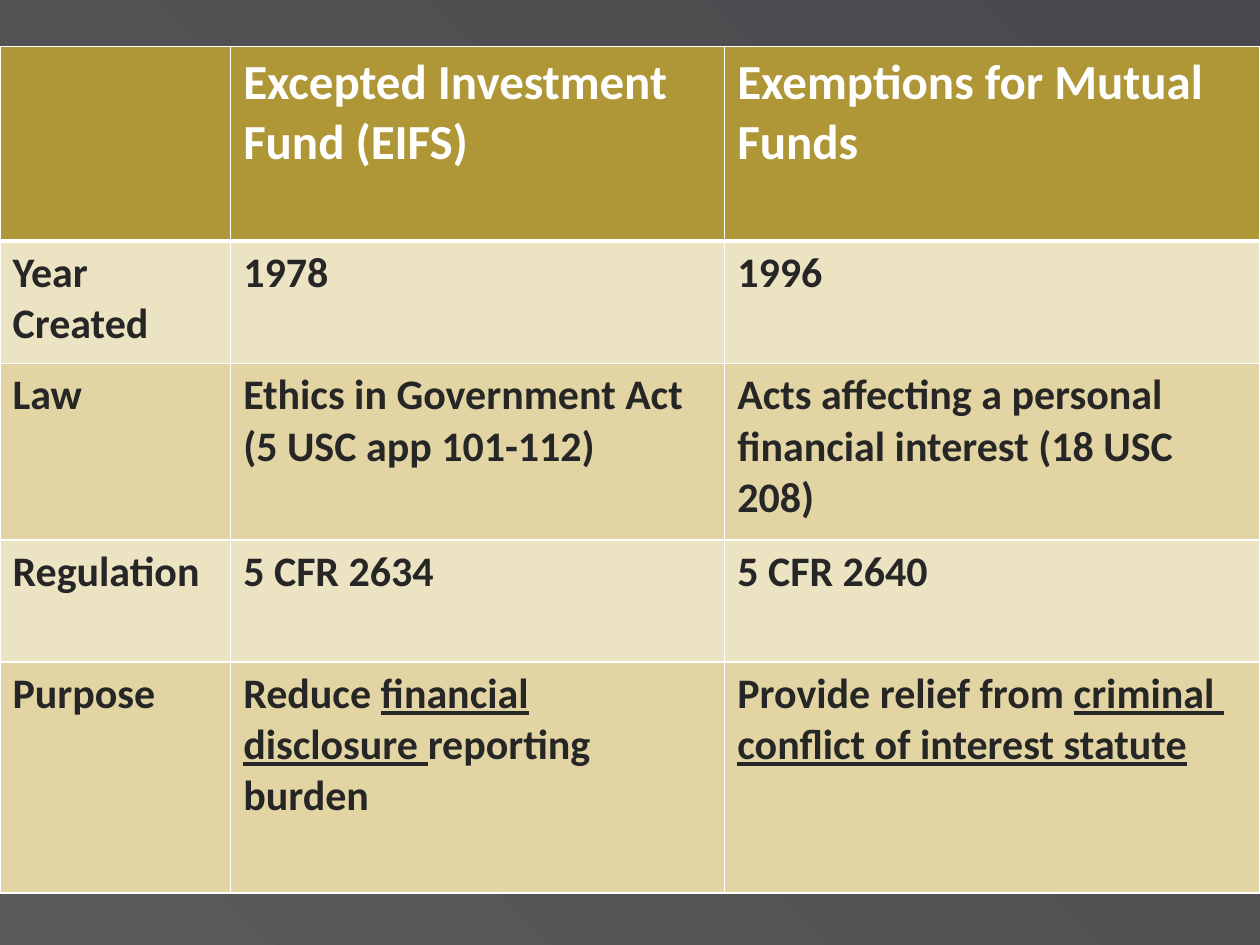
"""Build a slide comparing excepted investment funds with mutual fund exemptions."""
from lxml.etree import SubElement as Sub
from pptx import Presentation
from pptx.dml.color import RGBColor as Rgb
from pptx.oxml.ns import qn
from pptx.util import Cm, Pt

HUES = {
    "head": "AF9738", "light": "EBE3C2", "dark": "E2D5A3",
    "white": "FFFFFF", "ink": "262626", "gray": "595959", "slate": "4A484D",
}
ROWS = [
    ["", "Excepted Investment Fund (EIFS)", "Exemptions for Mutual Funds"],
    ["Year Created", "1978", "1996"],
    ["Law", "Ethics in Government Act (5 USC app 101-112)",
     "Acts affecting a personal financial interest (18 USC 208)"],
    ["Regulation", "5 CFR 2634", "5 CFR 2640"],
    ["Purpose", ("Reduce ", "financial disclosure ", "reporting burden"),
     ("Provide relief from ", "criminal  conflict of interest statute")],
]
WIDTHS = [4.65, 9.96, 10.79]
HEIGHTS = [3.92, 2.47, 3.56, 2.46, 4.65]
TOP = 0.94


def paint(slide):
    """Fill the background with a gradient from the lower left corner."""
    fill = slide.background.fill
    fill.gradient()
    for stop, hue in zip(fill.gradient_stops, ("gray", "slate")):
        stop.color.rgb = Rgb.from_string(HUES[hue])
    grad = next(slide.element.iter(qn("a:gradFill")))
    grad.remove(grad.find(qn("a:lin")))
    path = Sub(grad, qn("a:path"), path="circle")
    Sub(path, qn("a:fillToRect"), t="100000", r="100000")


def edge(cell, row):
    """Draw white cell borders, thicker below the header."""
    props = cell._tc.get_or_add_tcPr()
    for side in "LRTB":
        thick = (row, side) in ((0, "B"), (1, "T"))
        line = Sub(props, qn(f"a:ln{side}"), w=str(Pt(3 if thick else 1)))
        solid = Sub(line, qn("a:solidFill"))
        Sub(solid, qn("a:srgbClr"), val=HUES["white"])


def write(cell, text, row):
    """Put text in a cell, underlining every second part."""
    para = cell.text_frame.paragraphs[0]
    parts = (text,) if isinstance(text, str) else text
    for i, part in enumerate(parts):
        run = para.add_run()
        run.text = part
        font = run.font
        font.name, font.bold = "Calibri", True
        font.size = Pt(24 if row else 28)
        font.underline = i % 2 == 1
        font.color.rgb = Rgb.from_string(HUES["ink" if row else "white"])


def main():
    """Make the deck and save it."""
    deck = Presentation()
    deck.slide_width, deck.slide_height = Cm(25.4), Cm(19.05)
    slide = deck.slides.add_slide(deck.slide_layouts[6])
    paint(slide)
    grid = slide.shapes.add_table(
        len(ROWS), len(WIDTHS), Cm(0), Cm(TOP), Cm(sum(WIDTHS)), Cm(sum(HEIGHTS))
    ).table
    for col, width in zip(grid.columns, WIDTHS):
        col.width = Cm(width)
    for r, (texts, height) in enumerate(zip(ROWS, HEIGHTS)):
        grid.rows[r].height = Cm(height)
        hue = ("dark", "light")[r % 2] if r else "head"
        for c, text in enumerate(texts):
            cell = grid.cell(r, c)
            edge(cell, r)
            cell.fill.solid()
            cell.fill.fore_color.rgb = Rgb.from_string(HUES[hue])
            if text:
                write(cell, text, r)
    deck.save("out.pptx")


if __name__ == "__main__":
    main()
